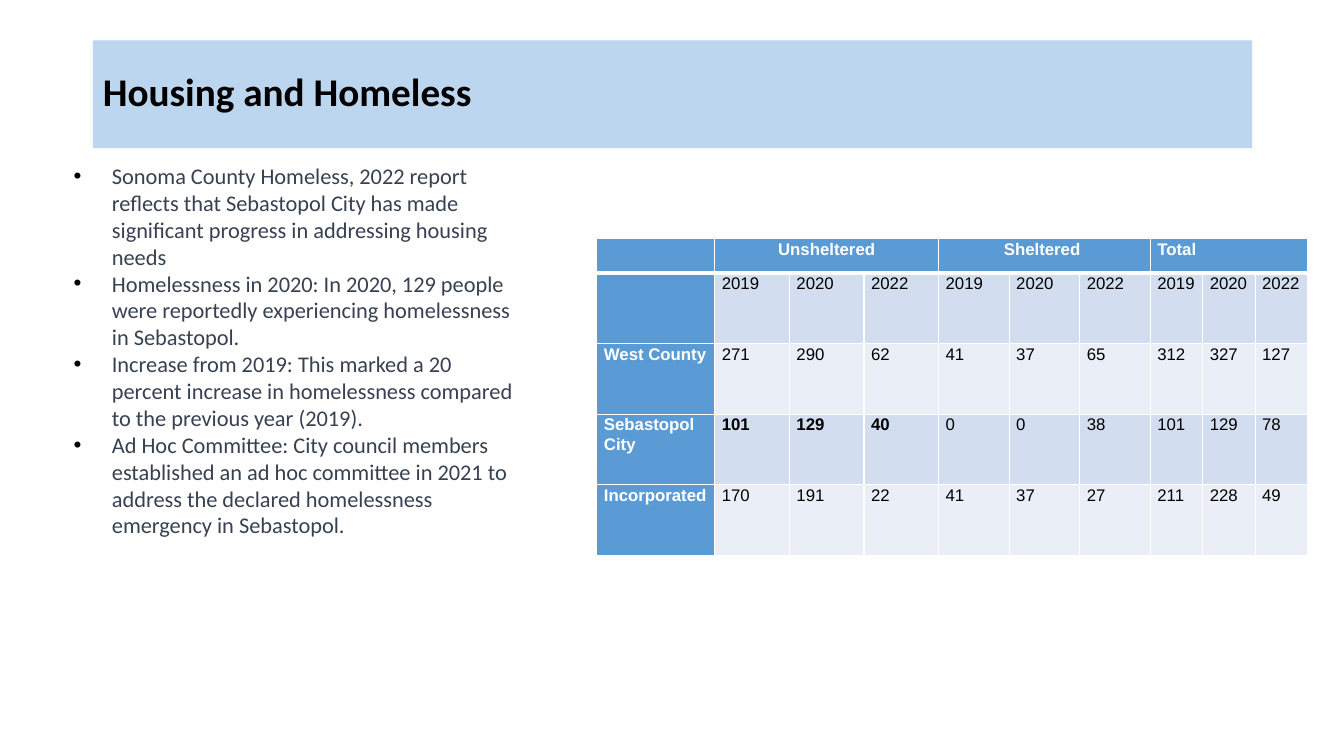
import pptx
import pptx.dml.color
import pptx.enum.text
import pptx.oxml
import pptx.oxml.ns
import pptx.util
from pptx.util import Inches

RGBColor = pptx.dml.color.RGBColor
Align = pptx.enum.text.PP_ALIGN
Anchor = pptx.enum.text.MSO_ANCHOR

BLACK = RGBColor(0x00, 0x00, 0x00)
WHITE = RGBColor(0xFF, 0xFF, 0xFF)
SLATE = RGBColor(0x37, 0x41, 0x51)
BANNER = RGBColor(0xBB, 0xD6, 0xEE)
HEADER = RGBColor(0x5B, 0x9B, 0xD5)
BANDS = (RGBColor(0xD2, 0xDE, 0xEF), RGBColor(0xEA, 0xEF, 0xF7))

FINDINGS = [
    "Sonoma County Homeless, 2022 report reflects that Sebastopol City has made "
    "significant progress in addressing housing needs",
    "Homelessness in 2020: In 2020, 129 people were reportedly experiencing "
    "homelessness in Sebastopol.",
    "Increase from 2019: This marked a 20 percent increase in homelessness "
    "compared to the previous year (2019).",
    "Ad Hoc Committee: City council members established an ad hoc committee in "
    "2021 to address the declared homelessness emergency in Sebastopol.",
]
YEARS = ["2019", "2020", "2022"]
COUNTS = [
    ["", "Unsheltered", "", "", "Sheltered ", "", "", "Total", "", ""],
    ["", *YEARS * 3],
    ["West County", 271, 290, 62, 41, 37, 65, 312, 327, 127],
    ["Sebastopol City", 101, 129, 40, 0, 0, 38, 101, 129, 78],
    ["Incorporated", 170, 191, 22, 41, 37, 27, 211, 228, 49],
]
COLUMN_WIDTHS = [1.17] + [0.74] * 3 + [0.7] * 3 + [0.52] * 3
ROW_HEIGHTS = [0.34] + [0.7] * 4
HIGHLIGHT_ROW, HIGHLIGHT_COLUMNS = 3, (1, 2, 3)


class SlideBuilder:
    """Holds the current slide and its text style."""

    text_font = "Calibri"
    table_font = "Arial"

    def __init__(self, deck):
        self.slide = deck.slides.add_slide(deck.slide_layouts[1])

    def place(self, shape, left, top, width, height):
        shape.left, shape.top = Inches(left), Inches(top)
        shape.width, shape.height = Inches(width), Inches(height)

    def add_span(self, para, text, font, size, color, bold=False):
        span = para.add_run()
        span.text = text
        span.font.name = font
        span.font.size = pptx.util.Pt(size)
        span.font.color.rgb = color
        span.font.bold = bold

    def title(self, text, *bounds):
        box = self.slide.shapes.title
        self.place(box, *bounds)
        box.fill.solid()
        box.fill.fore_color.rgb = BANNER
        frame = box.text_frame
        frame.auto_size = pptx.enum.text.MSO_AUTO_SIZE.NONE
        frame.vertical_anchor = Anchor.MIDDLE
        para = frame.paragraphs[0]
        para.alignment = Align.LEFT
        para.line_spacing = 0.9
        self.add_span(para, text, self.text_font, 28, BLACK, True)

    def bullets(self, items, *bounds):
        box = self.slide.placeholders[1]
        self.place(box, *bounds)
        frame = box.text_frame
        frame.auto_size = pptx.enum.text.MSO_AUTO_SIZE.NONE
        for index, item in enumerate(items):
            para = frame.add_paragraph() if index else frame.paragraphs[0]
            para.space_before = para.space_after = pptx.util.Pt(0)
            self.add_bullet(para)
            self.add_span(para, item, self.text_font, 16, SLATE)

    def add_bullet(self, para):
        properties = para._p.get_or_add_pPr()
        properties.set("marL", str(Inches(0.5)))
        properties.set("indent", str(Inches(-0.38)))
        namespace = pptx.oxml.ns.nsdecls("a")
        for markup in (
            f'<a:buClr {namespace}><a:srgbClr val="{BLACK}"/></a:buClr>',
            f'<a:buFont {namespace} typeface="Arial"/>',
            f'<a:buChar {namespace} char="•"/>',
        ):
            properties.append(pptx.oxml.parse_xml(markup))

    def table(self, rows, widths, heights, left, top):
        frame = self.slide.shapes.add_table(
            len(rows), len(widths), Inches(left), Inches(top),
            Inches(sum(widths)), Inches(sum(heights)))
        table = frame.table
        for column, width in zip(table.columns, widths):
            column.width = Inches(width)
        for row, height in zip(table.rows, heights):
            row.height = Inches(height)
        for r, values in enumerate(rows):
            for c, value in enumerate(values):
                self.fill_cell(table.cell(r, c), r, c, str(value))
        for first in (1, 4, 7):
            table.cell(0, first).merge(table.cell(0, first + 2))

    def fill_cell(self, cell, row, column, text):
        heading = row == 0 or column == 0
        cell.fill.solid()
        cell.fill.fore_color.rgb = HEADER if heading else BANDS[(row + 1) % 2]
        cell.margin_left = cell.margin_right = Inches(0.07)
        cell.margin_top = cell.margin_bottom = 0
        self.add_borders(cell, row)
        if text:
            para = cell.text_frame.paragraphs[0]
            para.line_spacing = 1.07
            if row == 0 and column < 7:
                para.alignment = Align.CENTER
            highlighted = row == HIGHLIGHT_ROW and column in HIGHLIGHT_COLUMNS
            self.add_span(para, text, self.table_font, 12,
                          WHITE if heading else BLACK, heading or highlighted)

    def add_borders(self, cell, row):
        """White edges, thicker between the heading row and the counts."""
        widths = {"L": 1, "R": 1, "T": 3 if row == 1 else 1, "B": 3 if row == 0 else 1}
        properties = cell._tc.get_or_add_tcPr()
        for index, (side, width) in enumerate(widths.items()):
            properties.insert(index, pptx.oxml.parse_xml(
                f'<a:ln{side} {pptx.oxml.ns.nsdecls("a")} w="{pptx.util.Pt(width)}">'
                f'<a:solidFill><a:srgbClr val="{WHITE}"/></a:solidFill></a:ln{side}>'))


def main():
    deck = pptx.Presentation()
    deck.slide_width, deck.slide_height = Inches(13.33), Inches(7.5)
    page = SlideBuilder(deck)
    page.title("Housing and Homeless", 0.92, 0.4, 11.5, 1.07)
    page.bullets(FINDINGS, 0.51, 1.56, 4.7, 6.32)
    page.table(COUNTS, COLUMN_WIDTHS, ROW_HEIGHTS, 5.92, 2.37)
    deck.save("out.pptx")


if __name__ == "__main__":
    main()
